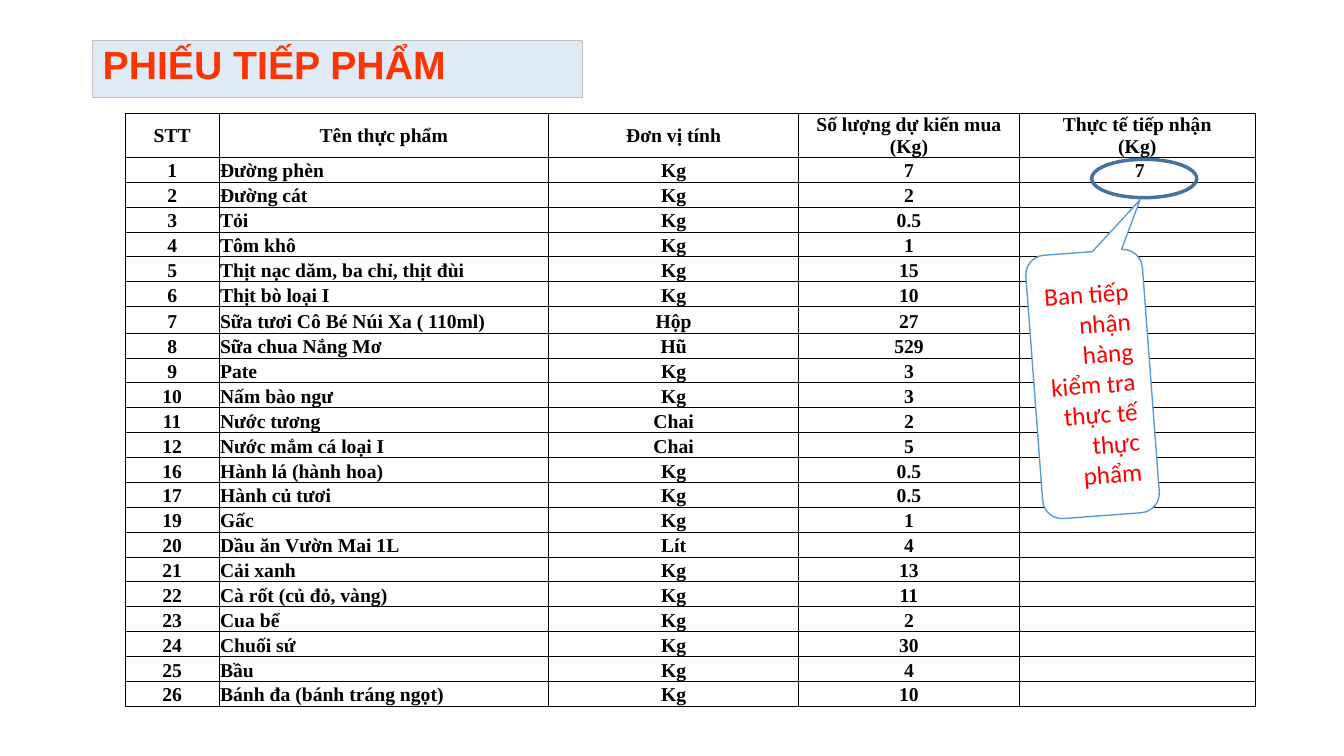
"""Build the food delivery receipt slide."""
from typing import NamedTuple

from lxml import etree
from pptx import Presentation
from pptx.dml.color import RGBColor
from pptx.enum import shapes, text
from pptx.oxml import ns
from pptx.util import Pt

BLACK = RGBColor(0x00, 0x00, 0x00)
WHITE = RGBColor(0xFF, 0xFF, 0xFF)
RED = RGBColor(0xFF, 0x00, 0x00)
ORANGE = RGBColor(0xFF, 0x33, 0x00)
PALE_BLUE = RGBColor(0xDE, 0xEB, 0xF7)
GREY = RGBColor(0xC0, 0xC0, 0xC0)
BLUE = RGBColor(0x5B, 0x9B, 0xD5)
DARK_BLUE = RGBColor(0x43, 0x73, 0x9E)

COLUMN_WIDTHS = (67, 235.4, 178.6, 157.7, 168.5)
HEADER_HEIGHT, ROW_HEIGHT, TALL_ROW_HEIGHT = 31.7, 17.5, 18.9
TALL_ROW = 7
NAME_COLUMN = 1


class Area(NamedTuple):
    left: float
    top: float
    width: float
    height: float


class Item(NamedTuple):
    number: str
    name: str
    unit: str
    planned: str
    received: str = ""


HEADER = Item("STT", "Tên thực phẩm", "Đơn vị tính",
              "Số lượng dự kiến mua (Kg)", "Thực tế tiếp nhận\n(Kg)")
ITEMS = (
    Item("1", "Đường phèn", "Kg", "7", " 7"),
    Item("2", "Đường cát", "Kg", "2"),
    Item("3", "Tỏi", "Kg", "0.5"),
    Item("4", "Tôm khô", "Kg", "1"),
    Item("5", "Thịt nạc dăm, ba chỉ, thịt đùi", "Kg", "15"),
    Item("6", "Thịt bò loại I", "Kg", "10"),
    Item("7", "Sữa tươi Cô Bé Núi Xa ( 110ml)", "Hộp", "27"),
    Item("8", "Sữa chua Nắng Mơ", "Hũ", "529"),
    Item("9", "Pate", "Kg", "3"),
    Item("10", "Nấm bào ngư", "Kg", "3"),
    Item("11", "Nước tương", "Chai", "2"),
    Item("12", "Nước mắm cá loại I", "Chai", "5"),
    Item("16", "Hành lá (hành hoa)", "Kg", "0.5"),
    Item("17", "Hành củ tươi", "Kg", "0.5"),
    Item("19", "Gấc", "Kg", "1"),
    Item("20", "Dầu ăn Vườn Mai 1L", "Lít", "4"),
    Item("21", "Cải xanh", "Kg", "13"),
    Item("22", "Cà rốt (củ đỏ, vàng)", "Kg", "11"),
    Item("23", "Cua bể", "Kg", "2"),
    Item("24", "Chuối sứ", "Kg", "30"),
    Item("25", "Bầu", "Kg", "4"),
    Item("26", "Bánh đa (bánh tráng ngọt)", "Kg", "10"),
)


def points(area: Area) -> list:
    return [Pt(length) for length in area]


def style_text(para, font_name: str, size: float, colour: RGBColor, bold: bool) -> None:
    for span in para.runs:
        span.font.name = font_name
        span.font.size = Pt(size)
        span.font.bold = bold
        span.font.color.rgb = colour


def outline(shape, colour: RGBColor, width: float) -> None:
    shape.line.color.rgb = colour
    shape.line.width = Pt(width)


def add_shape(page, kind, area: Area, colour: RGBColor, width: float):
    shape = page.shapes.add_shape(kind, *points(area))
    shape.shadow.inherit = False
    outline(shape, colour, width)
    return shape


def set_title(page) -> None:
    title = page.shapes.title
    title.left, title.top, title.width, title.height = points(Area(66.2, 28.8, 350, 41))
    title.fill.solid()
    title.fill.fore_color.rgb = PALE_BLUE
    outline(title, GREY, 0.75)
    frame = title.text_frame
    frame.text = "PHIẾU TIẾP PHẨM"
    frame.auto_size = text.MSO_AUTO_SIZE.NONE
    frame.vertical_anchor = text.MSO_ANCHOR.TOP
    para = frame.paragraphs[0]
    para.alignment = text.PP_ALIGN.LEFT
    para.line_spacing = 0.9
    style_text(para, "Arial", 28, ORANGE, True)


def add_borders(cell) -> None:
    properties = cell._tc.get_or_add_tcPr()
    for side in ("lnL", "lnR", "lnT", "lnB"):
        line = etree.SubElement(properties, ns.qn(f"a:{side}"), w=str(Pt(0.5)))
        fill = etree.SubElement(line, ns.qn("a:solidFill"))
        etree.SubElement(fill, ns.qn("a:srgbClr"), val=str(BLACK))


def fill_cell(cell, words: str, centred: bool, anchor) -> None:
    cell.margin_left = cell.margin_right = cell.margin_top = Pt(0.72)
    cell.margin_bottom = Pt(0)
    cell.vertical_anchor = anchor
    add_borders(cell)
    cell.fill.background()
    para = cell.text_frame.paragraphs[0]
    para.alignment = text.PP_ALIGN.CENTER if centred else text.PP_ALIGN.LEFT
    if words:
        para.text = words
        style_text(para, "Times New Roman", 14, BLACK, True)
    else:
        etree.SubElement(para._p, ns.qn("a:endParaRPr"), sz="1400")


def add_food_table(page) -> None:
    rows = (HEADER, *ITEMS)
    heights = [ROW_HEIGHT] * len(rows)
    heights[0], heights[TALL_ROW] = HEADER_HEIGHT, TALL_ROW_HEIGHT
    area = Area(89.5, 80.9, sum(COLUMN_WIDTHS), sum(heights))
    table = page.shapes.add_table(len(rows), len(COLUMN_WIDTHS), *points(area)).table
    table.first_row = table.horz_banding = False
    for column, width in zip(table.columns, COLUMN_WIDTHS):
        column.width = Pt(width)
    for row_index, item in enumerate(rows):
        table.rows[row_index].height = Pt(heights[row_index])
        is_header = row_index == 0
        anchor = text.MSO_ANCHOR.MIDDLE if is_header else text.MSO_ANCHOR.BOTTOM
        for column_index, words in enumerate(item):
            centred = is_header or column_index != NAME_COLUMN
            fill_cell(table.cell(row_index, column_index), words, centred, anchor)


def add_callout(page) -> None:
    callout = add_shape(page, shapes.MSO_SHAPE.ROUNDED_RECTANGULAR_CALLOUT,
                        Area(738.7, 180, 83.5, 188.6), BLUE, 1)
    for index, value in enumerate((0.523, -0.682, 0.167)):
        callout.adjustments[index] = value
    callout.rotation = 355.7
    callout.fill.solid()
    callout.fill.fore_color.rgb = WHITE
    frame = callout.text_frame
    frame.text = "Ban tiếp nhận hàng kiểm tra thực tế thực phẩm"
    frame.word_wrap = True
    frame.vertical_anchor = text.MSO_ANCHOR.MIDDLE
    para = frame.paragraphs[0]
    para.alignment = text.PP_ALIGN.RIGHT
    style_text(para, "Calibri", 18, RED, False)


def main() -> None:
    deck = Presentation()
    deck.slide_width, deck.slide_height = Pt(960), Pt(540)
    page = deck.slides.add_slide(deck.slide_layouts[5])
    set_title(page)
    add_food_table(page)
    add_callout(page)
    ring = add_shape(page, shapes.MSO_SHAPE.OVAL, Area(779.8, 113.8, 75, 27.4), DARK_BLUE, 2.5)
    ring.fill.background()
    deck.save("out.pptx")


if __name__ == "__main__":
    main()
